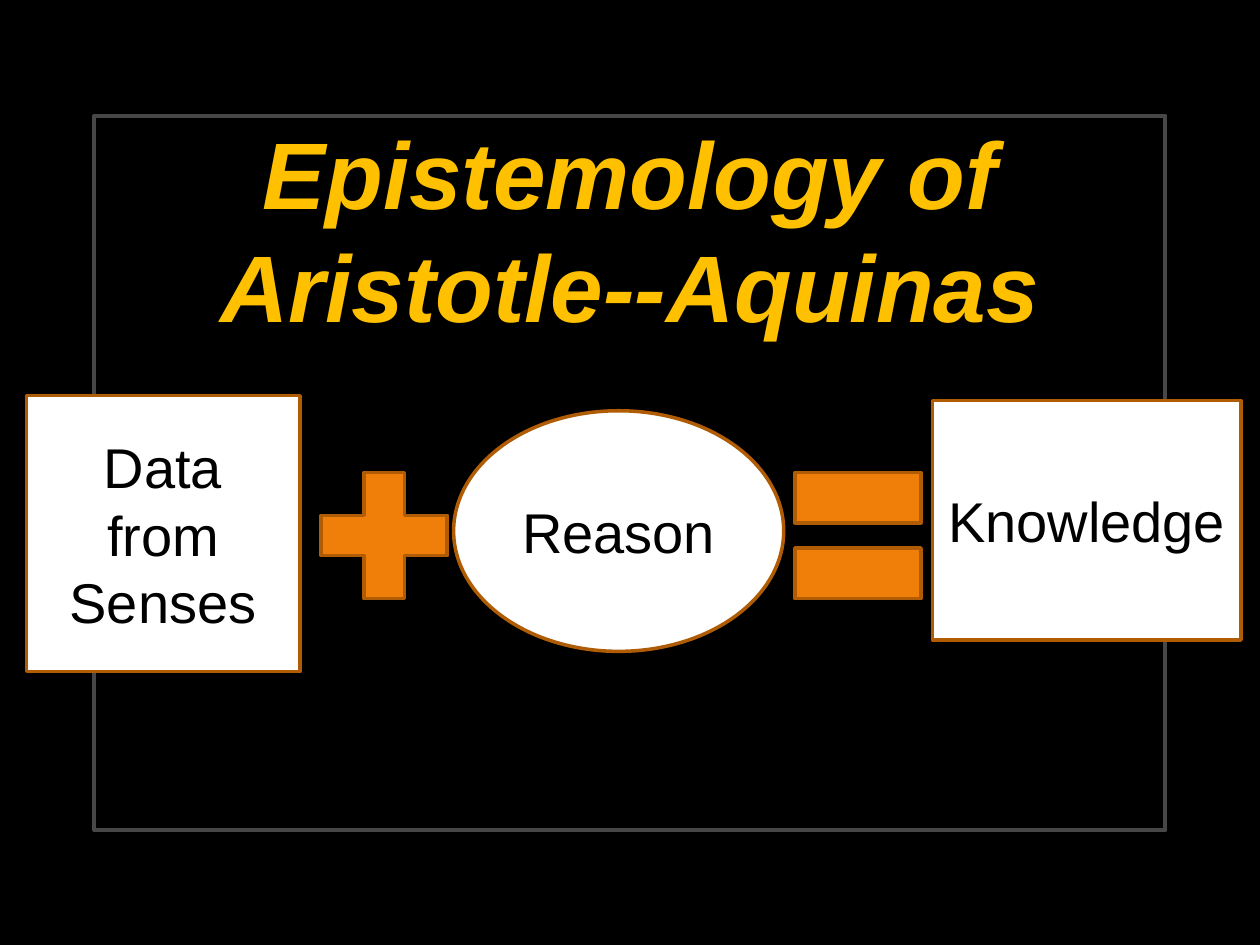
from dataclasses import dataclass

import pptx
import pptx.dml.color
import pptx.enum.shapes
import pptx.enum.text
import pptx.util

Inches = pptx.util.Inches
Pt = pptx.util.Pt
SHAPES = pptx.enum.shapes.MSO_SHAPE


def rgb(value):
    return pptx.dml.color.RGBColor.from_string(value)


@dataclass(frozen=True)
class Theme:
    font: str = "Arial"
    background: str = "000000"
    frame: str = "474747"
    title: str = "FFC000"
    text: str = "000000"
    term: str = "FFFFFF"
    operator: str = "F07F09"
    outline: str = "B05C05"
    title_size: float = 54
    term_size: float = 32
    frame_width: float = 2.25
    outline_width: float = 2


class SlideBuilder:
    def __init__(self, slide, theme):
        self.slide = slide
        self.theme = theme
        slide.background.fill.solid()
        slide.background.fill.fore_color.rgb = rgb(theme.background)

    def _paint(self, shape, fill, line, width):
        shape.shadow.inherit = False
        if fill:
            shape.fill.solid()
            shape.fill.fore_color.rgb = rgb(fill)
        else:
            shape.fill.background()
        shape.line.color.rgb = rgb(line)
        shape.line.width = Pt(width)

    def _write(self, shape, lines, size, color, emphasis=False):
        frame = shape.text_frame
        frame.word_wrap = True
        frame.vertical_anchor = pptx.enum.text.MSO_ANCHOR.MIDDLE
        frame.text = "\n".join(lines)
        for paragraph in frame.paragraphs:
            paragraph.alignment = pptx.enum.text.PP_ALIGN.CENTER
            font = paragraph.font
            font.name = self.theme.font
            font.size = Pt(size)
            font.color.rgb = rgb(color)
            font.bold = font.italic = emphasis

    def frame(self, *box):
        shape = self.slide.shapes.add_shape(SHAPES.RECTANGLE, *map(Inches, box))
        self._paint(shape, None, self.theme.frame, self.theme.frame_width)

    def title(self, text, *box):
        shape = self.slide.shapes.add_textbox(*map(Inches, box))
        self._write(shape, [text], self.theme.title_size, self.theme.title, True)

    def term(self, kind, lines, *box):
        shape = self.slide.shapes.add_shape(kind, *map(Inches, box))
        self._paint(shape, self.theme.term, self.theme.outline, self.theme.outline_width)
        self._write(shape, lines, self.theme.term_size, self.theme.text)

    def operator(self, left, top, contours):
        """Draw closed contours given in inches from the operator's corner."""
        outlines = [[(Inches(left + x), Inches(top + y)) for x, y in contour]
                    for contour in contours]
        builder = self.slide.shapes.build_freeform(*outlines[0][0])
        for index, (start, *rest) in enumerate(outlines):
            if index:
                builder.move_to(*start)
            builder.add_line_segments(rest, close=True)
        self._paint(builder.convert_to_shape(), self.theme.operator,
                    self.theme.outline, self.theme.outline_width)


def plus_contours(size=1, near=0.34, far=0.66):
    return [[(0, near), (near, near), (near, 0), (far, 0), (far, near), (size, near),
             (size, far), (far, far), (far, size), (near, size), (near, far), (0, far)]]


def equals_contours(size=1, bar=0.4):
    return [[(0, y), (size, y), (size, y + bar), (0, y + bar)]
            for y in (0, size - bar)]


def main():
    deck = pptx.Presentation()
    deck.slide_width, deck.slide_height = Inches(10), Inches(7.5)
    page = SlideBuilder(deck.slides.add_slide(deck.slide_layouts[6]), Theme())

    # Frame and heading
    page.frame(0.75, 0.92, 8.5, 5.67)
    page.title("Epistemology of Aristotle--Aquinas", 0.75, 1.2, 8.5, 1.22)

    # Equation: senses + reason = knowledge
    operator_top = 3.75
    page.term(SHAPES.RECTANGLE, ["Data", "from", "Senses"], 0.21, 3.14, 2.17, 2.19)
    page.term(SHAPES.OVAL, ["Reason"], 3.6, 3.26, 2.62, 1.91)
    page.operator(2.55, operator_top, plus_contours())
    page.operator(6.31, operator_top, equals_contours())
    page.term(SHAPES.RECTANGLE, ["Knowledge"], 7.4, 3.18, 2.45, 1.9)

    deck.save("out.pptx")


if __name__ == "__main__":
    main()
